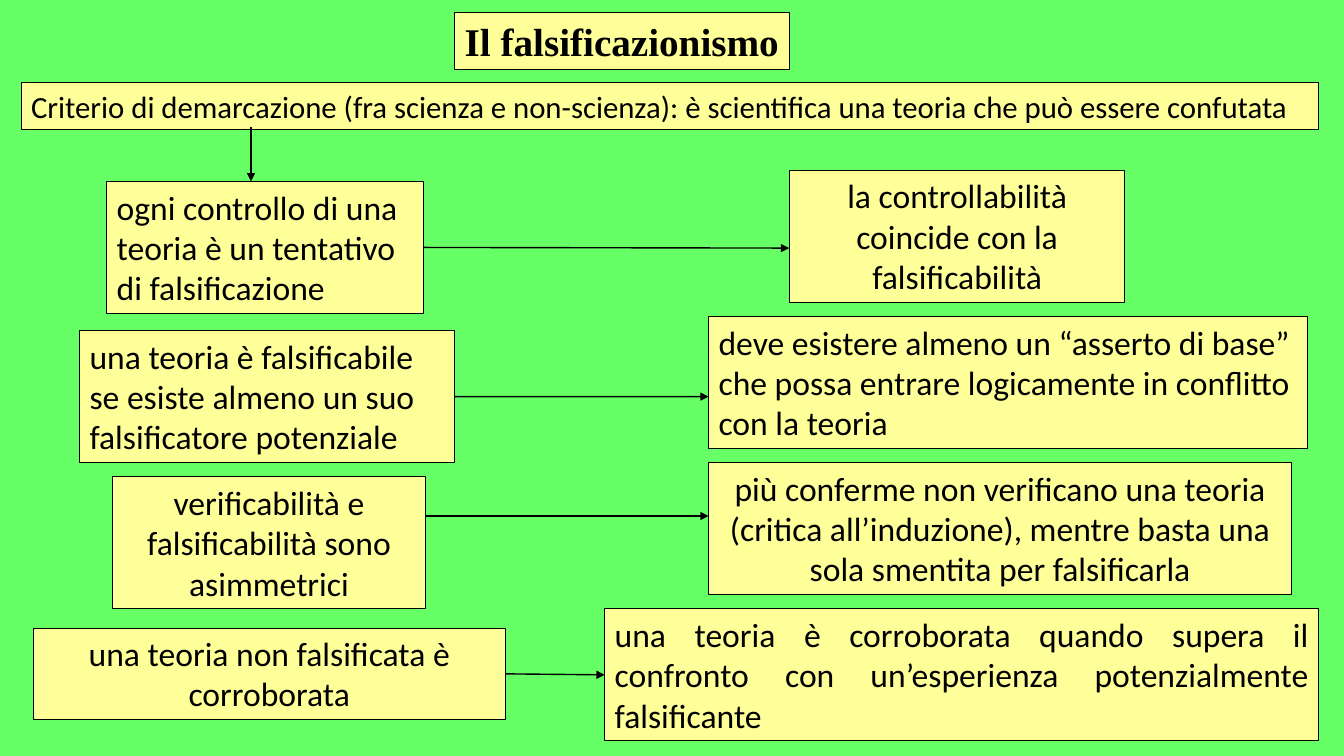
from pptx import Presentation
from pptx.dml.color import RGBColor
from pptx.enum.shapes import MSO_CONNECTOR
from pptx.enum.text import MSO_ANCHOR, MSO_AUTO_SIZE, PP_ALIGN
from pptx.oxml.ns import qn
from pptx.util import Pt
from lxml.etree import SubElement

GREEN = RGBColor(0x66, 0xFF, 0x66)
YELLOW = RGBColor(0xFF, 0xFF, 0x99)
BLACK = RGBColor(0, 0, 0)

LEFT, CENTER, JUSTIFY = PP_ALIGN.LEFT, PP_ALIGN.CENTER, PP_ALIGN.JUSTIFY
LEFT_SIDE, RIGHT_SIDE = 1, 3
BOX_HEIGHT = 94.3
RIGHT_TOP, RIGHT_STEP = 121.7, 104.4


class ConceptMap:
    body = {"name": "Calibri", "size": Pt(24), "bold": False}
    heading = {"name": "Times New Roman", "size": Pt(28), "bold": True}
    frame = {"auto_size": MSO_AUTO_SIZE.NONE, "vertical_anchor": MSO_ANCHOR.TOP,
             "margin_left": Pt(7.2), "margin_right": Pt(7.2),
             "margin_top": Pt(3.6), "margin_bottom": Pt(3.6)}

    def __init__(self, deck):
        self.page = deck.slides.add_slide(deck.slide_layouts[5])
        background = self.page.background.fill
        background.solid()
        background.fore_color.rgb = GREEN

    def apply(self, target, values):
        for name, value in values.items():
            setattr(target, name, value)

    def dress(self, box, text, align, font, wrap=True):
        box.fill.solid()
        box.fill.fore_color.rgb = YELLOW
        box.line.color.rgb = BLACK
        box.line.width = Pt(0.75)
        self.apply(box.text_frame, {**self.frame, "word_wrap": wrap})
        para = box.text_frame.paragraphs[0]
        para.alignment = align
        span = para.add_run()
        span.text = text
        self.apply(span.font, font)
        span.font.color.rgb = BLACK
        return box

    def title(self, text, left, top, width, height):
        box = self.page.shapes.title
        self.apply(box, {"left": Pt(left), "top": Pt(top),
                         "width": Pt(width), "height": Pt(height)})
        return self.dress(box, text, LEFT, self.heading, wrap=False)

    def box(self, text, left, top, width, height=BOX_HEIGHT, align=LEFT, size=24):
        box = self.page.shapes.add_textbox(Pt(left), Pt(top), Pt(width), Pt(height))
        return self.dress(box, text, align, {**self.body, "size": Pt(size)})

    def arrow(self, start_x, start_y, end_x, end_y):
        arrow = self.page.shapes.add_connector(
            MSO_CONNECTOR.STRAIGHT, Pt(start_x), Pt(start_y), Pt(end_x), Pt(end_y))
        arrow.line.color.rgb = BLACK
        arrow.line.width = Pt(1)
        SubElement(arrow.line._get_or_add_ln(), qn("a:tailEnd"), type="triangle")
        SubElement(arrow._element.spPr, qn("a:effectLst"))
        return arrow


ROWS = [
    (("ogni controllo di una teoria è un tentativo di falsificazione",
      76.3, 129.6, 226.1, BOX_HEIGHT, LEFT),
     ("la controllabilità coincide con la falsificabilità", 563.8, 239.8, CENTER),
     177.2, True, False),
    (("una teoria è falsificabile se esiste almeno un suo falsificatore potenziale",
      56.9, 236.2, 267.8, BOX_HEIGHT, LEFT),
     ("deve esistere almeno un “asserto di base” che possa entrare logicamente "
      "in conflitto con la teoria", 506.2, 427.7, LEFT),
     283.3, True, False),
    (("verificabilità e falsificabilità sono asimmetrici",
      80.6, 340.6, 223.2, BOX_HEIGHT, CENTER),
     ("più conferme non verificano una teoria (critica all’induzione), mentre "
      "basta una sola smentita per falsificarla", 506.2, 416.2, CENTER),
     368.6, False, False),
    (("una teoria non falsificata è corroborata",
      23.8, 448.6, 337, 65.5, CENTER),
     ("una teoria è corroborata quando supera il confronto con un’esperienza "
      "potenzialmente falsificante", 432, 509.8, JUSTIFY),
     481.7, True, True),
]


def main():
    deck = Presentation()
    deck.slide_width, deck.slide_height = Pt(960), Pt(540)
    concept_map = ConceptMap(deck)
    concept_map.title("Il falsificazionismo", 324.7, 8.6, 239, 41)
    concept_map.box("Criterio di demarcazione (fra scienza e non-scienza): è scientifica "
                    "una teoria che può essere confutata",
                    15.1, 59, 926.6, 33.8, JUSTIFY, 22)
    concept_map.arrow(179.3, 90.7, 179.3, 129.6)

    for index, (premise, outcome, level, join_start, join_end) in enumerate(ROWS):
        text, left, width, align = outcome
        source = concept_map.box(*premise)
        target = concept_map.box(text, left, RIGHT_TOP + index * RIGHT_STEP, width, align=align)
        arrow = concept_map.arrow(premise[1] + premise[3], level, left, level)
        if join_start:
            arrow.begin_connect(source, RIGHT_SIDE)
        if join_end:
            arrow.end_connect(target, LEFT_SIDE)

    deck.save("out.pptx")


if __name__ == "__main__":
    main()
